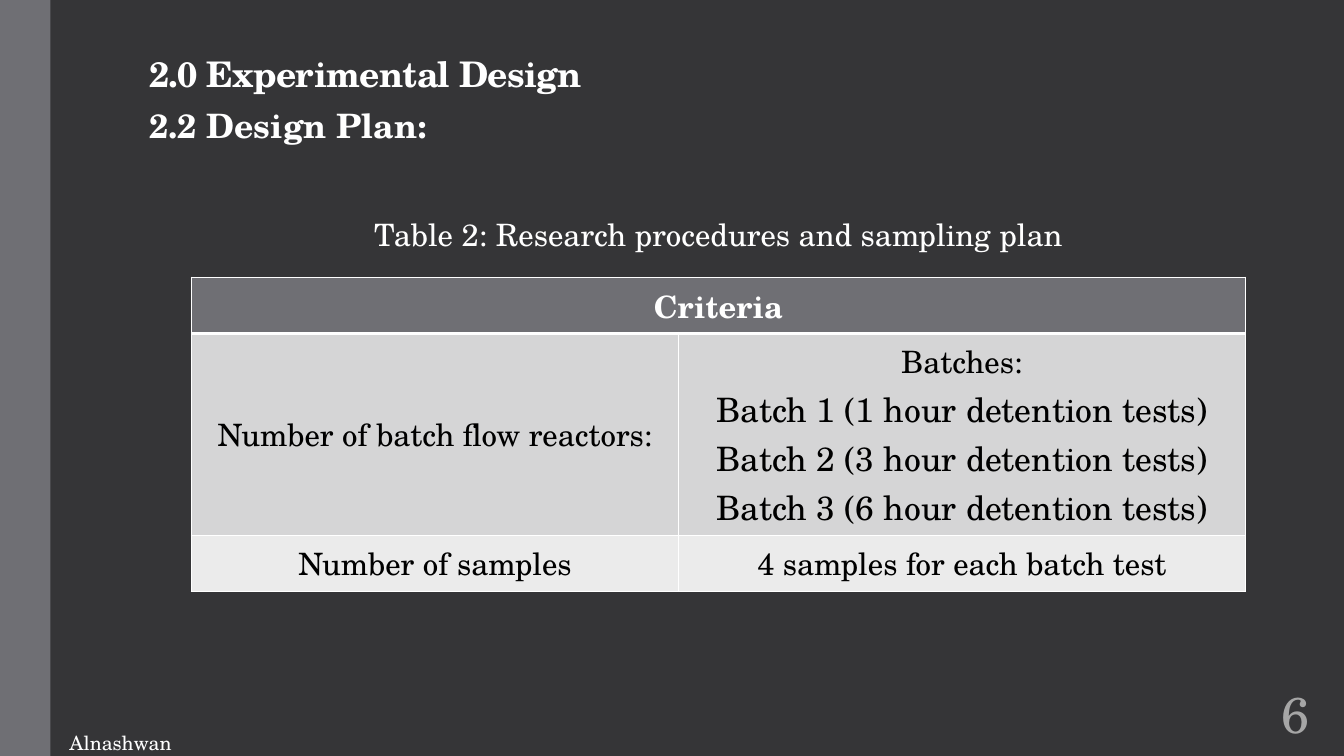
import pptx
import pptx.util
import pptx.dml.color
import pptx.enum.shapes
import pptx.enum.text
import pptx.oxml.ns
import lxml.etree

RGB = pptx.dml.color.RGBColor
INCH, PT = pptx.util.Inches, pptx.util.Pt
ALIGN, ANCHOR = pptx.enum.text.PP_ALIGN, pptx.enum.text.MSO_ANCHOR
FONT = "TeX Gyre Schola"
DARK = RGB(0x35, 0x35, 0x37)
GRAY = RGB(0x6F, 0x6F, 0x74)
PALE = RGB(0xD5, 0xD5, 0xD6)
LIGHT = RGB(0xEB, 0xEB, 0xEB)
DIM = RGB(0xA6, 0xA6, 0xA6)
WHITE = RGB(0xFF, 0xFF, 0xFF)
BLACK = RGB(0, 0, 0)


def write(frame, text, size=22, color=WHITE, bold=False, align=ALIGN.LEFT, new=False):
    """Write text as one paragraph and return it."""
    para = frame.add_paragraph() if new else frame.paragraphs[0]
    para.alignment = align
    run = para.add_run()
    run.text = text
    run.font.name, run.font.size = FONT, PT(size)
    run.font.bold, run.font.color.rgb = bold, color
    return para


def edge(cell, side, width):
    """Draw one white side of a table cell."""
    line = lxml.etree.SubElement(cell._tc.get_or_add_tcPr(),
                                 pptx.oxml.ns.qn("a:ln" + side), w=str(PT(width)))
    fill = lxml.etree.SubElement(line, pptx.oxml.ns.qn("a:solidFill"))
    lxml.etree.SubElement(fill, pptx.oxml.ns.qn("a:srgbClr"), val=str(WHITE))


deck = pptx.Presentation()
deck.slide_width, deck.slide_height = INCH(13.33), INCH(7.5)
slide = deck.slides.add_slide(deck.slide_layouts[6])
slide.background.fill.solid()
slide.background.fill.fore_color.rgb = DARK

# Side bar
bar = slide.shapes.add_shape(pptx.enum.shapes.MSO_SHAPE.RECTANGLE,
                             0, 0, INCH(0.5), deck.slide_height)
bar.shadow.inherit = False
bar.fill.solid()
bar.fill.fore_color.rgb = GRAY
bar.line.fill.background()

# Headings, caption, page number and author
left, wide = 1.9, 10.45
texts = [
    ("2.0 Experimental Design", (1.38, 0.23, 4.89, 0.76), ANCHOR.BOTTOM,
     dict(size=25.2, bold=True)),
    ("2.2 Design Plan:", (1.38, 0.99, 3.37, 0.5), ANCHOR.TOP, dict(size=24, bold=True)),
    ("Table 2: Research procedures and sampling plan", (left, 2.09, wide, 0.47),
     ANCHOR.TOP, dict(align=ALIGN.CENTER)),
    ("6", (12.35, 6.75, 1, 0.65), ANCHOR.MIDDLE,
     dict(size=36, color=DIM, align=ALIGN.CENTER)),
    ("Alnashwan", (0.59, 7.2, 1.22, 0.34), ANCHOR.TOP, dict(size=14)),
]
for text, place, anchor, style in texts:
    frame = slide.shapes.add_textbox(*map(INCH, place)).text_frame
    frame.word_wrap = text != "Alnashwan"
    frame.vertical_anchor = anchor
    para = write(frame, text, **style)
    if anchor == ANCHOR.BOTTOM:
        para.line_spacing = 0.85
        para.runs[0].font._element.set("spc", "-50")
    if anchor == ANCHOR.MIDDLE:
        frame.margin_left = frame.margin_right = INCH(0.05)

# Table grid
cols, rows = (4.83, 5.62), (0.56, 2.0, 0.56)
table = slide.shapes.add_table(3, 2, INCH(left), INCH(2.75),
                               INCH(wide), INCH(sum(rows))).table
table.first_row = table.horz_banding = False
for col, width in zip(table.columns, cols):
    col.width = INCH(width)
for row, height in zip(table.rows, rows):
    row.height = INCH(height)

# Cell borders and fills
for r, color in enumerate((GRAY, PALE, LIGHT)):
    for cell in table.rows[r].cells:
        for side in "LRTB":
            edge(cell, side, 3 if (r, side) in ((0, "B"), (1, "T")) else 1)
        cell.fill.solid()
        cell.fill.fore_color.rgb = color
        cell.vertical_anchor = ANCHOR.MIDDLE
table.cell(0, 0).merge(table.cell(0, 1))

# Cell text
write(table.cell(0, 0).text_frame, "Criteria", bold=True, align=ALIGN.CENTER)
body = dict(color=BLACK, align=ALIGN.CENTER)
words = {
    (1, 0): "Number of batch flow reactors:",
    (1, 1): "Batches:",
    (2, 0): "Number of samples",
    (2, 1): "4 samples for each batch test",
}
for spot, text in words.items():
    write(table.cell(*spot).text_frame, text, **body)
for num, hours in enumerate((1, 3, 6), 1):
    write(table.cell(1, 1).text_frame, f"Batch {num} ({hours} hour detention tests)",
          size=24, new=True, **body)

deck.save("out.pptx")
